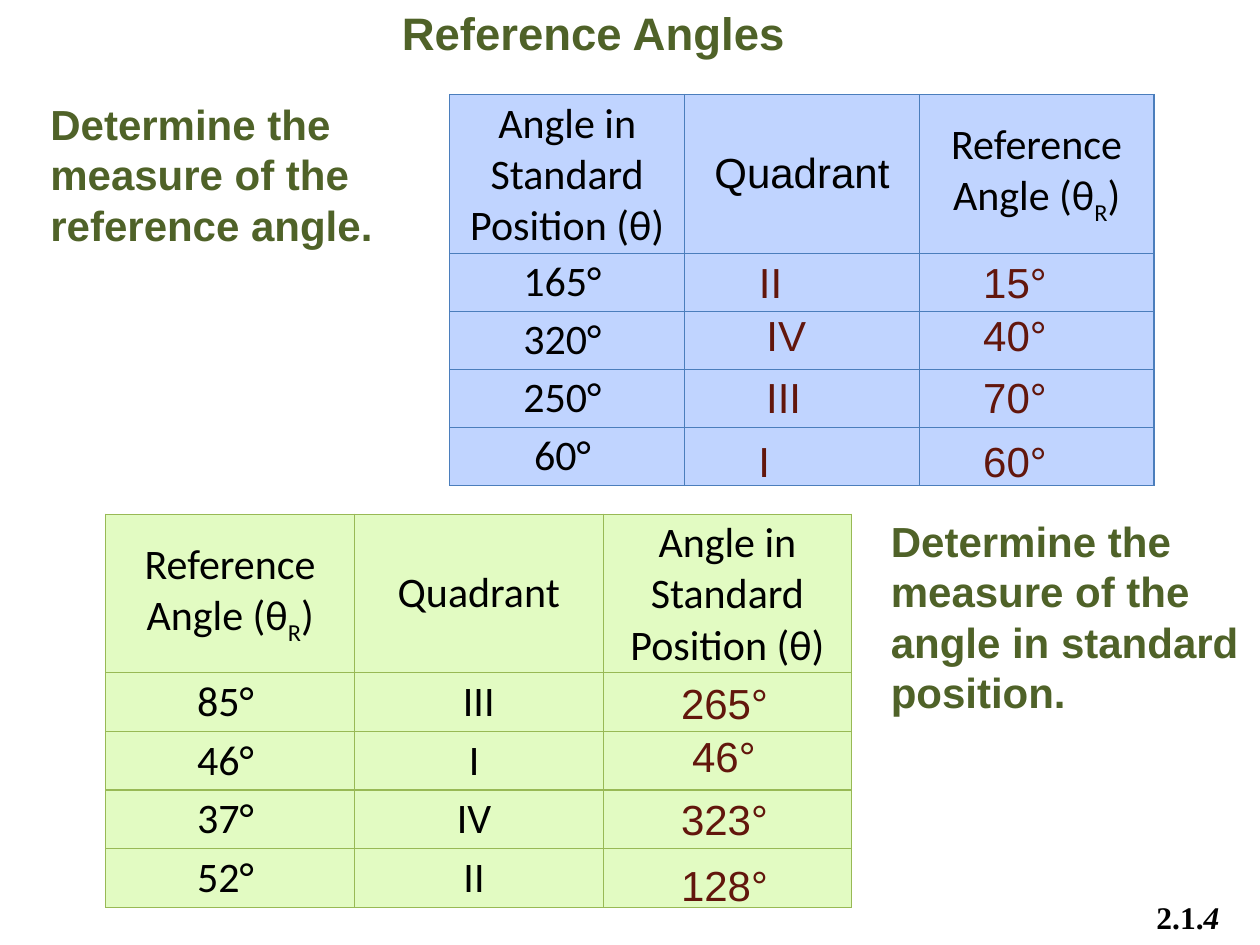
"""Build the reference angles practice slide with its two answer tables."""
from dataclasses import dataclass

from lxml.etree import SubElement
from pptx import Presentation
from pptx.dml.color import RGBColor
from pptx.enum.shapes import MSO_SHAPE as Shape
from pptx.enum.text import MSO_ANCHOR as Anchor, MSO_AUTO_SIZE as AutoSize, PP_ALIGN as Align
from pptx.oxml.ns import qn
from pptx.util import Inches, Pt


@dataclass(frozen=True)
class Theme:
    heading: str = "4F6228"
    answer: str = "62160C"
    ink: str = "000000"
    paper: str = "FFFFFF"
    blue_fill: str = "C0D4FF"
    blue_line: str = "4B7EBC"
    green_fill: str = "E2FBC2"
    green_line: str = "98B955"
    sans: str = "Arial"
    table_font: str = "Calibri"
    serif: str = "Times New Roman"
    title_size: int = 26
    text_size: int = 24
    number_size: int = 18


THEME = Theme()
TIGHT = (0.07, 0.03)
STANDARD = [("Angle in Standard Position (θ)", {})]
REFERENCE = [("Reference Angle (θ", {}), ("R", {"baseline": -25}), (")", {})]


def write(frame, text, font=THEME.sans, size=THEME.text_size, color=THEME.ink,
          bold=False, align=Align.LEFT):
    """Fill a text frame with a string or a list of (text, options) spans."""
    para = frame.paragraphs[0]
    para.alignment = align
    spans = [(text, {})] if isinstance(text, str) else text
    for words, options in spans:
        span = para.add_run()
        span.text = words
        span.font.name = font
        span.font.size = Pt(size)
        span.font.bold = bold
        span.font.italic = options.get("italic", False)
        span.font.color.rgb = RGBColor.from_string(color)
        if "baseline" in options:
            span._r.get_or_add_rPr().set("baseline", str(options["baseline"] * 1000))


def set_frame(frame, margins=(0.1, 0.05), wrap=True, fit=AutoSize.SHAPE_TO_FIT_TEXT):
    """Set the margins, wrapping and fitting of a text frame."""
    frame.margin_left = frame.margin_right = Inches(margins[0])
    frame.margin_top = frame.margin_bottom = Inches(margins[1])
    frame.vertical_anchor = Anchor.TOP
    frame.word_wrap = wrap
    frame.auto_size = fit


def add_title(page, text):
    """Place the slide title in the title placeholder."""
    title = page.shapes.title
    title.left, title.top, title.width, title.height = map(Inches, (0.17, 0.01, 9.08, 0.5))
    set_frame(title.text_frame, TIGHT, fit=AutoSize.NONE)
    write(title.text_frame, text, size=THEME.title_size, color=THEME.heading,
          bold=True, align=Align.CENTER)


def add_prompt(page, text, left, top, width, height):
    """Add a bold instruction beside a table."""
    box = page.shapes.add_textbox(*map(Inches, (left, top, width, height)))
    set_frame(box.text_frame, TIGHT)
    write(box.text_frame, text, color=THEME.heading, bold=True)


def add_answers(page, answers, tops):
    """Add a column of answers, each given as text, left and width."""
    for (text, left, width), top in zip(answers, tops):
        box = page.shapes.add_textbox(*map(Inches, (left, top, width, 0.5)))
        set_frame(box.text_frame, wrap=False)
        write(box.text_frame, text, color=THEME.answer, align=Align.CENTER)


def set_borders(cell, color):
    """Draw the four sides of a table cell."""
    properties = cell._tc.get_or_add_tcPr()
    for position, side in enumerate(("a:lnL", "a:lnR", "a:lnT", "a:lnB")):
        line = SubElement(properties, qn(side), w=str(Pt(0.75)))
        fill = SubElement(line, qn("a:solidFill"))
        SubElement(fill, qn("a:srgbClr"), val=color)
        properties.insert(position, line)


def add_angle_table(page, rows, left, top, width, row_height, fill, line, anchor,
                    quadrant_font=THEME.table_font):
    """Add a table of equal columns with a tall header row."""
    header_height = 1.26
    height = header_height + row_height * (len(rows) - 1)
    frame = page.shapes.add_table(len(rows), 3, *map(Inches, (left, top, width, height)))
    table = frame.table
    table.first_row = table.horz_banding = False
    for column in table.columns:
        column.width = Inches(width / 3)
    for row_index, values in enumerate(rows):
        table.rows[row_index].height = Inches(row_height if row_index else header_height)
        for column_index, value in enumerate(values):
            cell = table.cell(row_index, column_index)
            cell.margin_left = cell.margin_right = Inches(TIGHT[0])
            cell.margin_top = cell.margin_bottom = Inches(TIGHT[1])
            cell.vertical_anchor = anchor if row_index else Anchor.MIDDLE
            cell.fill.solid()
            cell.fill.fore_color.rgb = RGBColor.from_string(fill)
            set_borders(cell, line)
            if value:
                font = quadrant_font if value == "Quadrant" else THEME.table_font
                write(cell.text_frame, value, font=font, align=Align.CENTER)


def add_lesson_number(page, spans):
    """Add the lesson number on a half-transparent plate."""
    plate = page.shapes.add_shape(Shape.RECTANGLE, *map(Inches, (9.08, 7.08, 0.71, 0.4)))
    plate.shadow.inherit = False
    plate.line.fill.background()
    plate.fill.solid()
    plate.fill.fore_color.rgb = RGBColor.from_string(THEME.paper)
    color = plate._element.spPr.find(qn("a:solidFill"))[0]
    SubElement(color, qn("a:alpha"), val="50000")
    set_frame(plate.text_frame, wrap=False)
    write(plate.text_frame, spans, font=THEME.serif, size=THEME.number_size, bold=True)


def main():
    """Build and save the deck."""
    deck = Presentation()
    deck.slide_width, deck.slide_height = Inches(10), Inches(7.5)
    page = deck.slides.add_slide(deck.slide_layouts[5])

    add_title(page, "Reference Angles")
    add_prompt(page, "Determine the measure of the reference angle.", 0.33, 0.75, 2.83, 1.28)
    angles = ("165° ", "320° ", "250° ", "60° ")
    add_angle_table(page, [(STANDARD, "Quadrant", REFERENCE)] + [(a, "", "") for a in angles],
                    3.57, 0.75, 5.59, 0.46, THEME.blue_fill, THEME.blue_line,
                    Anchor.MIDDLE, quadrant_font=THEME.sans)
    tops = (1.99, 2.41, 2.9, 3.41)
    add_answers(page, [(a, 7.7, 0.71) for a in ("15°", "40°", "70°", "60°")], tops)
    add_answers(page, [("II", 5.92, 0.39), ("IV", 5.98, 0.52),
                       ("III", 5.98, 0.48), ("I", 5.92, 0.29)], tops)

    given = (("85° ", "III"), ("46° ", "I "), ("37° ", "IV "), ("52° ", "II "))
    add_angle_table(page, [(REFERENCE, "Quadrant", STANDARD)] + [(*pair, "") for pair in given],
                    0.84, 4.08, 5.92, 0.465, THEME.green_fill, THEME.green_line, Anchor.TOP)
    add_answers(page, [("265°", 5.3, 0.9), ("46°", 5.39, 0.71),
                       ("323°", 5.3, 0.9), ("128°", 5.3, 0.9)], (5.33, 5.75, 6.25, 6.77))
    add_prompt(page, "Determine the measure of the angle in standard position.",
               7, 4.06, 2.92, 1.68)
    add_lesson_number(page, [("2.1.", {}), ("4", {"italic": True})])
    deck.save("out.pptx")


if __name__ == "__main__":
    main()
